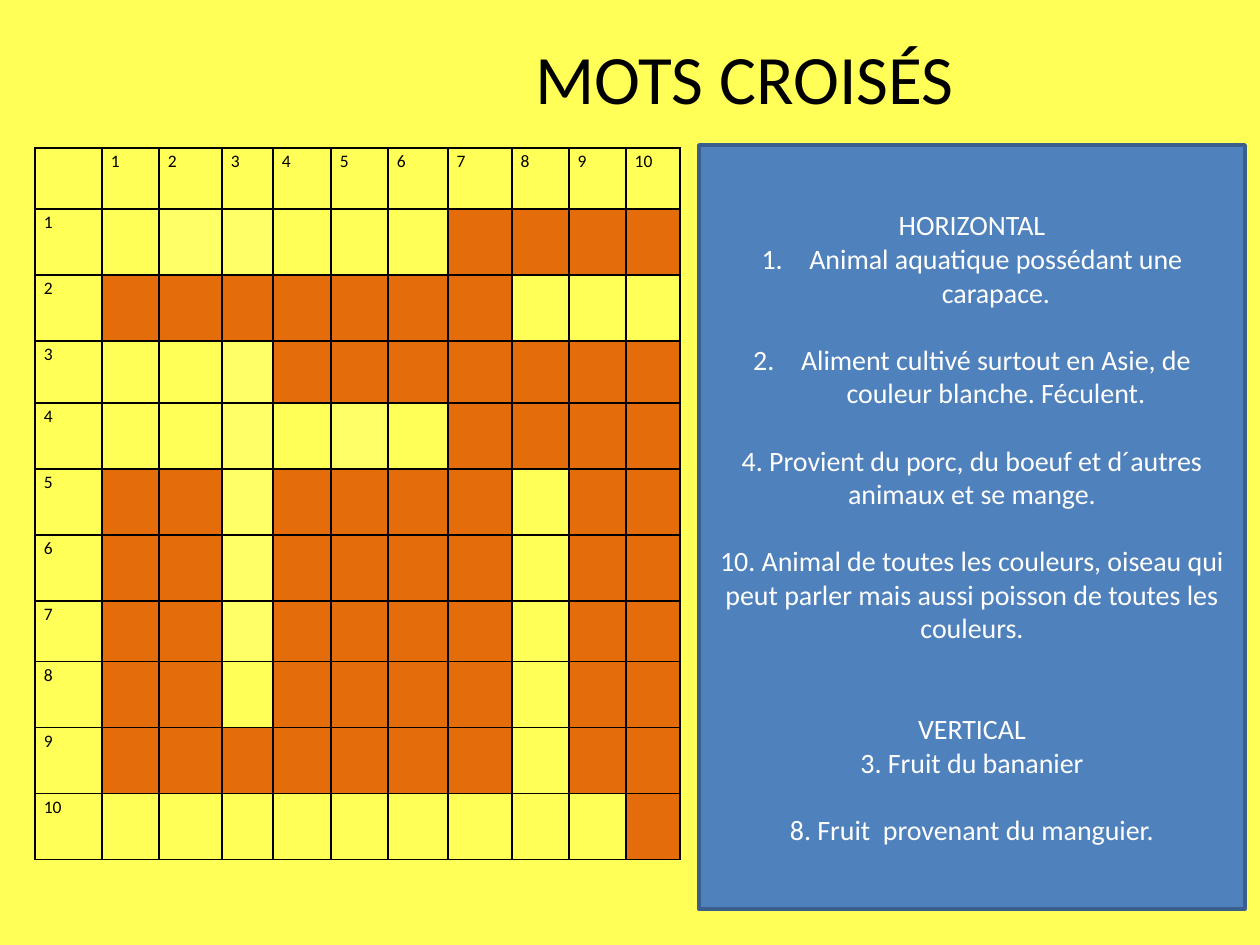
from lxml.etree import SubElement
from pptx import Presentation
from pptx.dml.color import RGBColor
from pptx.enum.shapes import MSO_SHAPE
from pptx.enum.text import MSO_ANCHOR, MSO_AUTO_SIZE, PP_ALIGN
from pptx.oxml.ns import qn
from pptx.util import Emu, Inches, Pt

FONT = "Calibri"
BLACK = RGBColor(0, 0, 0)
WHITE = RGBColor(255, 255, 255)
YELLOW = RGBColor(0xFF, 0xFF, 0x57)
PALE = RGBColor(0xFF, 0xFF, 0x66)
ORANGE = RGBColor(0xE4, 0x6C, 0x0A)
BLUE = RGBColor(0x4F, 0x81, 0xBD)
NAVY = RGBColor(0x3A, 0x5F, 0x8C)

TITLE = "MOTS CROISÉS"
GRID = [
    ".oo...####",
    "#######...",
    "..o#######",
    "..o.o.####",
    "##o####.##",
    "##o####.##",
    "##o####.##",
    "##.####.##",
    "#######.##",
    ".........#",
]
FILLS = {"#": ORANGE, "o": PALE}
COL_W = [67, 57, 63, 51, 58, 57, 60, 64, 57, 57, 54]
ROW_H = [61, 66, 66, 62, 66, 66, 66, 61, 66, 66, 66]
# text, numbered, lines of space before
CLUES = [
    ("HORIZONTAL", False, 0),
    ("Animal aquatique possédant une carapace.", True, 0),
    ("Aliment cultivé surtout en Asie, de couleur blanche. Féculent.", True, 1),
    ("4. Provient du porc, du boeuf et d´autres animaux et se mange.", False, 1),
    ("10. Animal de toutes les couleurs, oiseau qui peut parler mais aussi "
     "poisson de toutes les couleurs.", False, 1),
    ("VERTICAL", False, 2),
    ("3. Fruit du bananier", False, 0),
    ("8. Fruit  provenant du manguier.", False, 1),
]
LINE_PT = 19.2


def px(n):
    return Emu(round(n * 914400 / 126))


def add_run(p, text, size, color):
    r = p.add_run()
    r.text = text
    r.font.name, r.font.size = FONT, Pt(size)
    r.font.color.rgb = color


def number(p):
    pPr = p._p.get_or_add_pPr()
    pPr.set("marL", str(Inches(0.38)))
    pPr.set("indent", str(-Inches(0.38)))
    SubElement(pPr, qn("a:buFont"), typeface="+mj-lt")
    SubElement(pPr, qn("a:buAutoNum"), type="arabicPeriod")


def add_borders(cell):
    tcPr = cell._tc.get_or_add_tcPr()
    for side in ("lnL", "lnR", "lnT", "lnB"):
        ln = SubElement(tcPr, qn("a:" + side), w=str(Pt(1)))
        fill = SubElement(ln, qn("a:solidFill"))
        SubElement(fill, qn("a:srgbClr"), val=str(BLACK))


def label(cell, text):
    cell.margin_left = cell.margin_right = Inches(0.07)
    cell.margin_top = cell.margin_bottom = 0
    p = cell.text_frame.paragraphs[0]
    p.line_spacing = 1.15
    add_run(p, text, 10, BLACK)


def add_title(s):
    sp = s.shapes.title
    sp.left, sp.top, sp.width, sp.height = px(292), px(38), px(905), px(77)
    tf = sp.text_frame
    tf.auto_size = MSO_AUTO_SIZE.NONE
    tf.vertical_anchor = MSO_ANCHOR.MIDDLE
    p = tf.paragraphs[0]
    p.alignment = PP_ALIGN.CENTER
    add_run(p, TITLE, 39.6, BLACK)


def add_clues(s):
    sp = s.shapes.add_shape(MSO_SHAPE.RECTANGLE, px(699), px(145), px(546), px(764))
    sp.shadow.inherit = False
    sp.fill.solid()
    sp.fill.fore_color.rgb = BLUE
    sp.line.color.rgb = NAVY
    sp.line.width = Pt(2)
    tf = sp.text_frame
    tf.word_wrap = True
    tf.vertical_anchor = MSO_ANCHOR.MIDDLE
    for i, (text, numbered, gap) in enumerate(CLUES):
        p = tf.add_paragraph() if i else tf.paragraphs[0]
        p.alignment = PP_ALIGN.CENTER
        if numbered:
            number(p)
        if gap:
            p.space_before = Pt(gap * LINE_PT)
        add_run(p, text, 16, WHITE)


def add_grid(s):
    frame = s.shapes.add_table(len(ROW_H), len(COL_W), px(35), px(148),
                               px(sum(COL_W)), px(sum(ROW_H)))
    table = frame.table
    table.first_row = table.horz_banding = False
    for col, w in zip(table.columns, COL_W):
        col.width = px(w)
    for row, h in zip(table.rows, ROW_H):
        row.height = px(h)
    for i in range(len(ROW_H)):
        for j in range(len(COL_W)):
            cell = table.cell(i, j)
            add_borders(cell)
            color = FILLS.get(GRID[i - 1][j - 1]) if i and j else None
            if color:
                cell.fill.solid()
                cell.fill.fore_color.rgb = color
            else:
                cell.fill.background()
            if (i == 0) != (j == 0):
                label(cell, str(i + j))


def main():
    prs = Presentation()
    prs.slide_width, prs.slide_height = Inches(10), Inches(7.5)
    s = prs.slides.add_slide(prs.slide_layouts[5])
    s.background.fill.solid()
    s.background.fill.fore_color.rgb = YELLOW
    add_title(s)
    add_clues(s)
    add_grid(s)
    prs.save("out.pptx")


if __name__ == "__main__":
    main()
